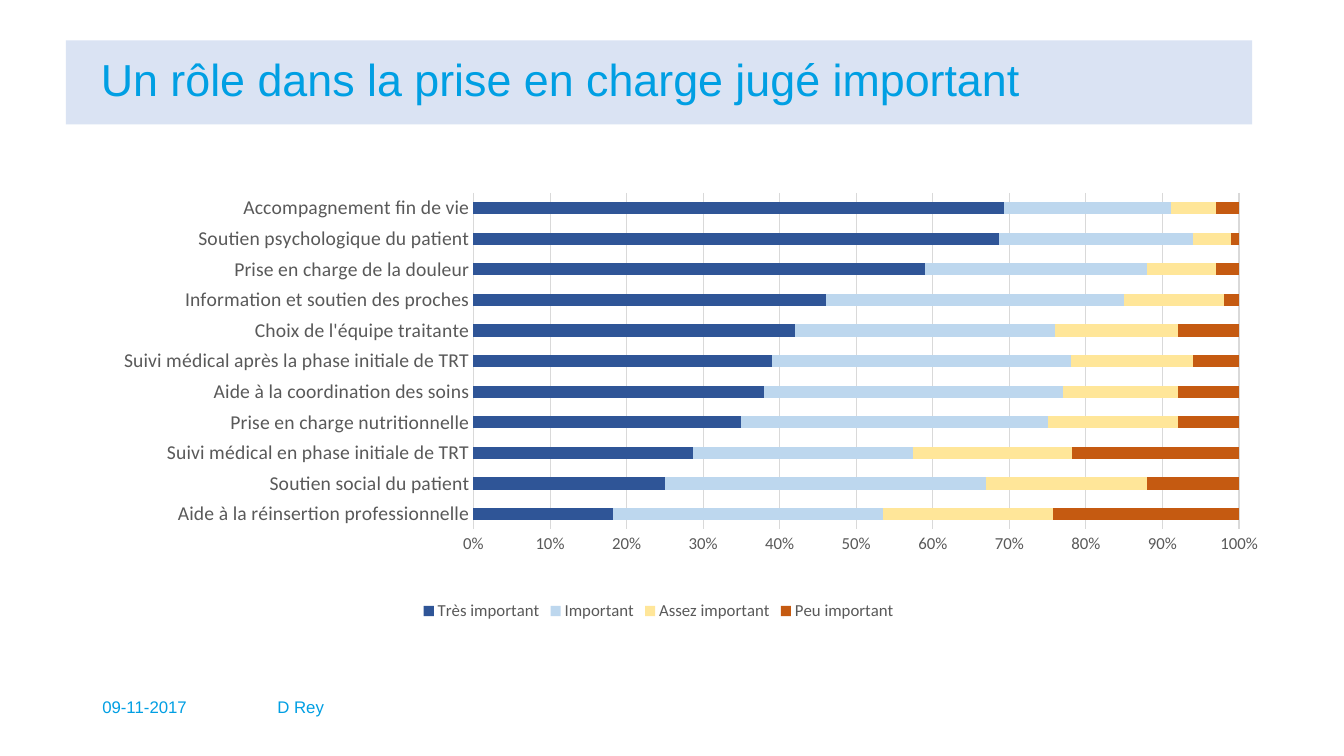
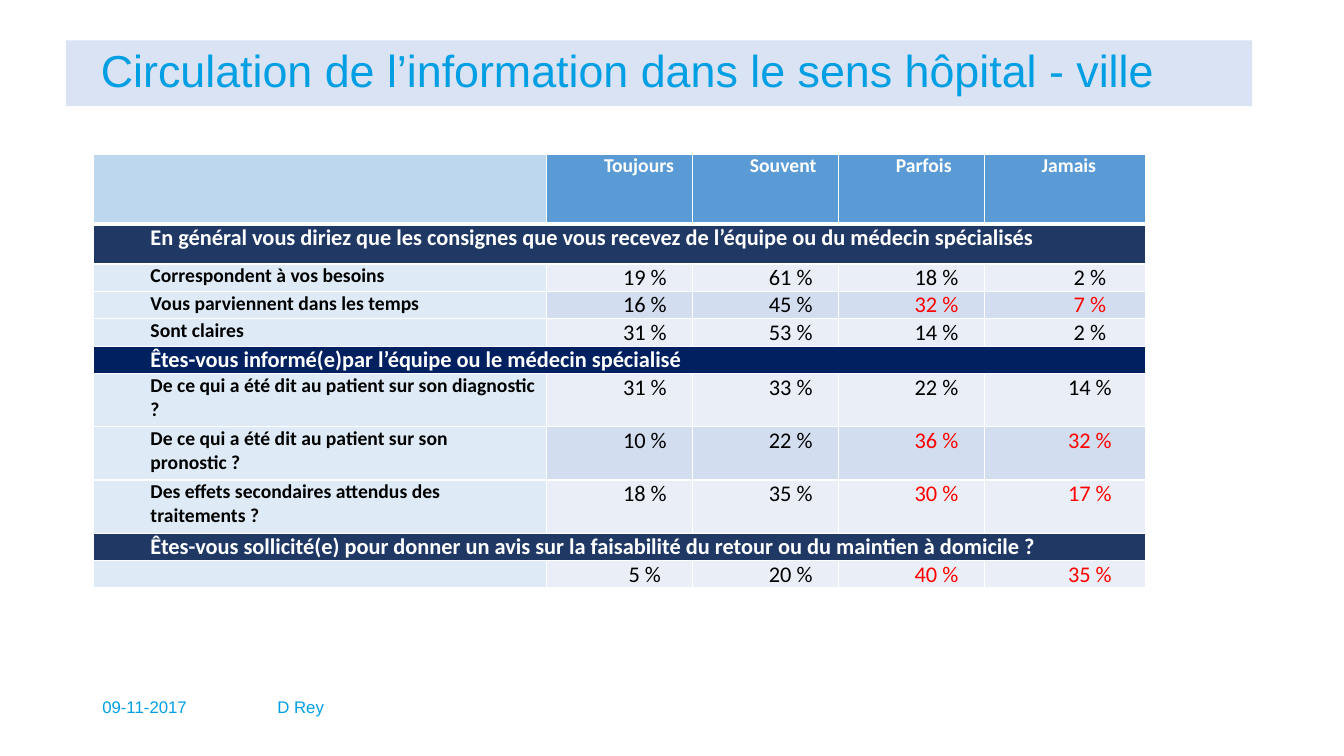
"""Build two slides on the role of family doctors: an importance chart and an information table."""
from dataclasses import dataclass

import pptx
import pptx.chart.data
import pptx.dml.color
import pptx.enum.chart
import pptx.enum.text
import pptx.oxml
import pptx.oxml.ns
import pptx.util

Pt = pptx.util.Pt
ALIGN = pptx.enum.text.PP_ALIGN
ANCHOR = pptx.enum.text.MSO_ANCHOR
CHART = pptx.enum.chart


@dataclass(frozen=True)
class Theme:
    heading_font: str = "Arial"
    body_font: str = "Calibri"
    accent: str = "009FE3"
    title_band: str = "DAE3F3"
    white: str = "FFFFFF"
    black: str = "000000"
    alert: str = "FF0000"
    chart_text: str = "595959"
    chart_line: str = "D9D9D9"
    header_blank: str = "BDD7EE"
    header: str = "5B9BD5"
    question: str = "DEEBF7"
    bands: tuple = ("EAEFF7", "D2DEEF")
    title_size: int = 32
    answer_size: int = 16
    label_size: int = 14
    small_size: int = 12


THEME = Theme()

SLIDE_SIZE = (960, 540)
TITLES = {
    "importance": ("Un rôle dans la prise en charge jugé important", 60),
    "information": ("Circulation de l’information dans le sens hôpital - ville", 47),
}
FOOTERS = [("09-11-2017", 66, 114), ("D Rey", 191, 190)]

ROLES = [
    ("Aide à la réinsertion professionnelle", 18, 35, 22, 24),
    ("Soutien social du patient", 25, 42, 21, 12),
    ("Suivi médical en phase initiale de TRT", 29, 29, 21, 22),
    ("Prise en charge nutritionnelle", 35, 40, 17, 8),
    ("Aide à la coordination des soins", 38, 39, 15, 8),
    ("Suivi médical après la phase initiale de TRT", 39, 39, 16, 6),
    ("Choix de l'équipe traitante", 42, 34, 16, 8),
    ("Information et soutien des proches", 46, 39, 13, 2),
    ("Prise en charge de la douleur", 59, 29, 9, 3),
    ("Soutien psychologique du patient", 68, 25, 5, 1),
    ("Accompagnement fin de vie", 70, 22, 6, 3),
]
RATINGS = [
    ("Très important", "2F5597"),
    ("Important", "BDD7EE"),
    ("Assez important", "FFE699"),
    ("Peu important", "C55A11"),
]
CHART_BOX = (29.5, 121.5, 882, 325)
PLOT_AREA = {"x": 0.35, "y": 0.05, "w": 0.62, "h": 0.74}

FREQUENCIES = ["Toujours", "Souvent", "Parfois", "Jamais"]
SECTIONS = [
    ("En général vous diriez que les consignes que vous recevez de l’équipe ou du médecin spécialisés",
     "203864", 28.8, 19.5, [
         ("Correspondent à vos besoins", (19, 61, 18, 2), False),
         ("Vous parviennent dans les temps", (16, 45, 32, 7), True),
         ("Sont claires", (31, 53, 14, 2), False),
     ]),
    ("Êtes-vous informé(e)par l’équipe ou le médecin spécialisé",
     "002060", 19.5, 38, [
         ("De ce qui a été dit au patient sur son diagnostic ?", (31, 33, 22, 14), False),
         ("De ce qui a été dit au patient sur son pronostic ?", (10, 22, 36, 32), True),
         ("Des effets secondaires attendus des traitements ?", (18, 35, 30, 17), True),
     ]),
    ("Êtes-vous sollicité(e) pour donner un avis sur la faisabilité du retour ou du maintien à domicile ?",
     "203864", 19.5, 19.5, [("", (5, 20, 40, 35), True)]),
]
TABLE_ORIGIN = (66.5, 110.2)
COLUMN_WIDTHS = [324, 104.2, 104.2, 104.2, 115]
HEADER_HEIGHT = 49.6
CELL_INDENT = 36


def rgb(color):
    return pptx.dml.color.RGBColor.from_string(color)


def set_all(target, values):
    for name, value in values.items():
        setattr(target, name, value)


def set_font(font, size, color, name=THEME.body_font, bold=False):
    set_all(font, {"size": Pt(size), "name": name, "bold": bold})
    font.color.rgb = rgb(color)


def set_fill(target, color):
    target.fill.solid()
    target.fill.fore_color.rgb = rgb(color)


def write_heading_text(frame, text, size, left_inset):
    set_all(frame, {
        "text": text, "word_wrap": True, "vertical_anchor": ANCHOR.MIDDLE,
        "auto_size": pptx.enum.text.MSO_AUTO_SIZE.NONE, "margin_left": Pt(left_inset),
    })
    paragraph = frame.paragraphs[0]
    set_all(paragraph, {"alignment": ALIGN.LEFT, "line_spacing": 0.9})
    set_font(paragraph.runs[0].font, size, THEME.accent, THEME.heading_font)


def add_slide(deck, topic):
    slide = deck.slides.add_slide(deck.slide_layouts[5])
    text, height = TITLES[topic]
    title = slide.shapes.title
    set_all(title, {"left": Pt(47), "top": Pt(28.8), "width": Pt(847.5), "height": Pt(height)})
    set_fill(title, THEME.title_band)
    write_heading_text(title.text_frame, text, THEME.title_size, 25)
    for text, left, width in FOOTERS:
        footer = slide.shapes.add_textbox(Pt(left), Pt(492), Pt(width), Pt(27))
        write_heading_text(footer.text_frame, text, THEME.small_size, 7.2)
    return slide


def place_plot(chart):
    layout = pptx.oxml.parse_xml(
        f"<c:layout {pptx.oxml.ns.nsdecls('c')}><c:manualLayout>"
        '<c:layoutTarget val="inner"/><c:xMode val="edge"/><c:yMode val="edge"/>'
        + "".join(f'<c:{side} val="{share}"/>' for side, share in PLOT_AREA.items())
        + "</c:manualLayout></c:layout>")
    plot_area = chart._chartSpace.chart.plotArea
    for old in plot_area.findall(pptx.oxml.ns.qn("c:layout")):
        plot_area.remove(old)
    plot_area.insert(0, layout)


def add_importance_chart(slide):
    data = pptx.chart.data.CategoryChartData()
    labels, *columns = zip(*ROLES)
    data.categories = labels
    for (rating, _), shares in zip(RATINGS, columns):
        data.add_series(rating, shares)
    chart = slide.shapes.add_chart(
        CHART.XL_CHART_TYPE.BAR_STACKED_100, *map(Pt, CHART_BOX), data).chart
    set_all(chart, {"has_title": False, "has_legend": True})
    set_font(chart.font, THEME.small_size, THEME.chart_text)
    set_all(chart.legend, {
        "position": CHART.XL_LEGEND_POSITION.BOTTOM, "include_in_layout": False})
    set_font(chart.legend.font, THEME.small_size, THEME.chart_text)
    plot = chart.plots[0]
    set_all(plot, {"gap_width": 150, "overlap": 100, "vary_by_categories": False})
    for series, (_, color) in zip(plot.series, RATINGS):
        set_fill(series.format, color)

    roles, shares = chart.category_axis, chart.value_axis
    for axis, size in ((roles, THEME.label_size), (shares, THEME.small_size)):
        set_all(axis, {"major_tick_mark": CHART.XL_TICK_MARK.NONE,
                       "minor_tick_mark": CHART.XL_TICK_MARK.NONE})
        set_font(axis.tick_labels.font, size, THEME.chart_text)
    set_all(shares, {"has_major_gridlines": True, "major_unit": 0.1})
    set_all(shares.tick_labels, {"number_format": "0%", "number_format_is_linked": False})
    shares.format.line.fill.background()
    for line in (roles.format.line, shares.major_gridlines.format.line):
        line.color.rgb = rgb(THEME.chart_line)
        line.width = Pt(0.75)
    place_plot(chart)


def add_borders(cell, bottom_width):
    properties = cell._tc.get_or_add_tcPr()
    for position, (side, width) in enumerate(zip("LRTB", (1, 1, 1, bottom_width))):
        properties.insert(position, pptx.oxml.parse_xml(
            f'<a:ln{side} {pptx.oxml.ns.nsdecls("a")} w="{Pt(width)}"><a:solidFill>'
            f'<a:srgbClr val="{THEME.white}"/></a:solidFill></a:ln{side}>'))


def fill_cell(cell, text, fill, color=THEME.black, size=THEME.label_size,
              bold=True, align=ALIGN.LEFT, bottom_width=1):
    set_all(cell, {"margin_left": Pt(5), "margin_right": Pt(5),
                   "margin_top": 0, "margin_bottom": 0})
    set_fill(cell, fill)
    add_borders(cell, bottom_width)
    paragraph = cell.text_frame.paragraphs[0]
    paragraph.alignment = align
    paragraph._p.get_or_add_pPr().set("marL", str(Pt(CELL_INDENT)))
    if text:
        run = paragraph.add_run()
        run.text = text
        set_font(run.font, size, color, bold=bold)
    else:
        paragraph._p.get_or_add_endParaRPr().set("sz", str(size * 100))


def table_rows():
    rows = [(HEADER_HEIGHT, [
        {"text": text, "fill": THEME.header if text else THEME.header_blank,
         "color": THEME.white, "bottom_width": 3} for text in ["", *FREQUENCIES]])]
    for heading, fill, heading_height, row_height, questions in SECTIONS:
        rows.append((heading_height, [
            {"text": text, "fill": fill, "color": THEME.white, "size": THEME.answer_size}
            for text in [heading, *[""] * len(FREQUENCIES)]]))
        for question, answers, alarming in questions:
            band = THEME.bands[len(rows) % 2]
            cells = [{"text": question, "fill": THEME.question}]
            for column, share in enumerate(answers):
                cells.append({
                    "text": f"{share} %", "fill": band, "size": THEME.answer_size,
                    "color": THEME.alert if alarming and column >= 2 else THEME.black,
                    "bold": False, "align": ALIGN.CENTER})
            rows.append((row_height, cells))
    return rows


def add_information_table(slide):
    rows = table_rows()
    size = (sum(COLUMN_WIDTHS), sum(height for height, _ in rows))
    table = slide.shapes.add_table(
        len(rows), len(COLUMN_WIDTHS), *map(Pt, TABLE_ORIGIN + size)).table
    for column, width in zip(table.columns, COLUMN_WIDTHS):
        column.width = Pt(width)
    headings = {section[0] for section in SECTIONS}
    for index, (height, cells) in enumerate(rows):
        table.rows[index].height = Pt(height)
        for column, values in enumerate(cells):
            fill_cell(table.cell(index, column), **values)
        if cells[0]["text"] in headings:
            table.cell(index, 0).merge(table.cell(index, len(cells) - 1))


def main():
    deck = pptx.Presentation()
    deck.slide_width, deck.slide_height = map(Pt, SLIDE_SIZE)
    add_importance_chart(add_slide(deck, "importance"))
    add_information_table(add_slide(deck, "information"))
    deck.save("out.pptx")


if __name__ == "__main__":
    main()
